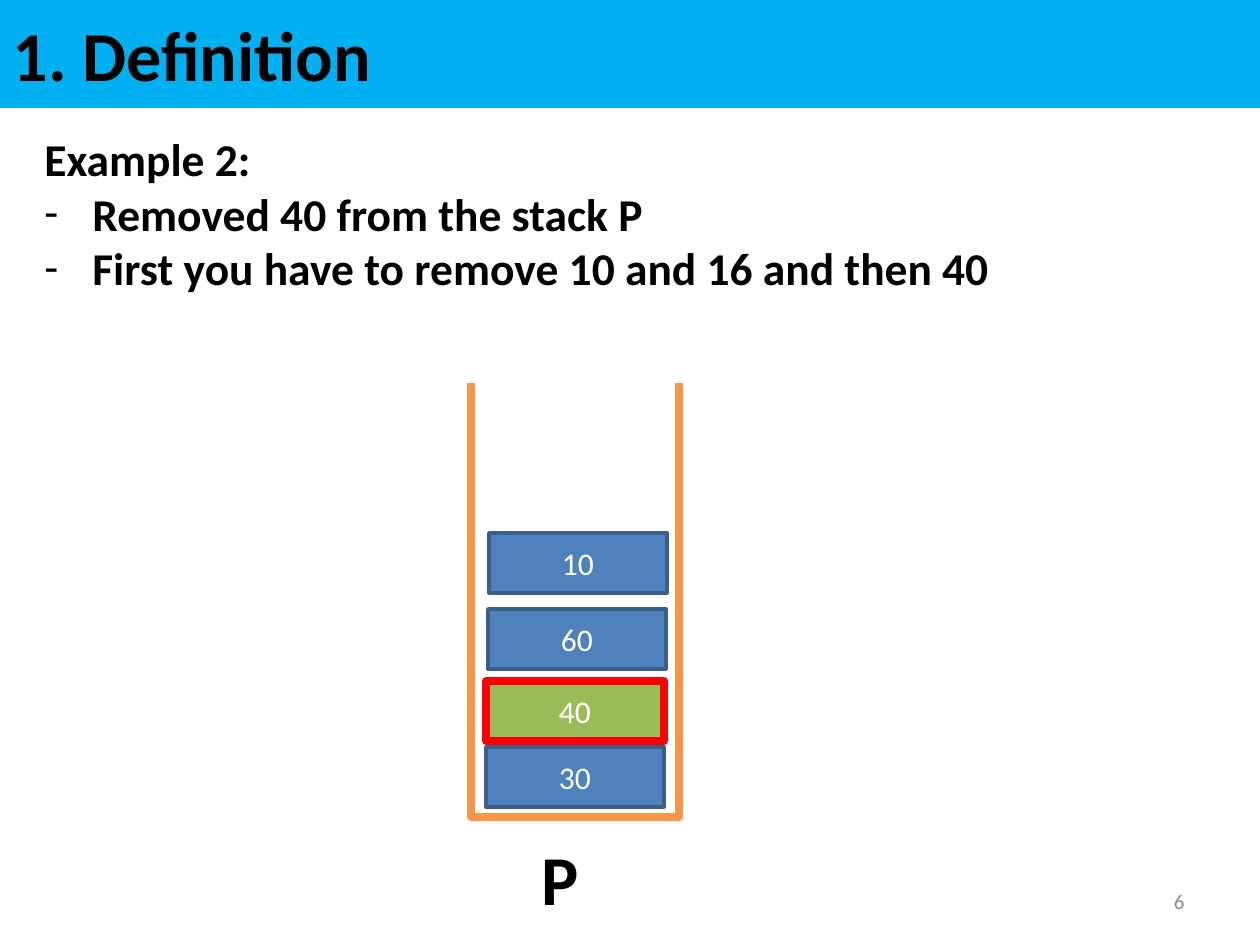
from dataclasses import dataclass
from typing import Optional

from lxml.etree import SubElement
from pptx import Presentation
from pptx.dml.color import RGBColor
from pptx.enum.shapes import MSO_SHAPE
from pptx.enum.text import MSO_ANCHOR as Anchor, PP_ALIGN as Align
from pptx.oxml.ns import qn
from pptx.util import Emu, Pt

PX_PER_INCH = 126
FONT = "Calibri"
COLORS = {
    "band": "00B0F0", "ink": "000000", "paper": "FFFFFF", "number": "8C8C8C",
    "stack": "F79646", "item": "4F81BD", "item_edge": "3A5F8C",
    "target": "9BBB59", "target_edge": "FF0000",
}


@dataclass(frozen=True)
class Box:
    left: int
    top: int
    width: int
    height: int


@dataclass(frozen=True)
class Item:
    value: str
    left: int
    top: int
    fill: str = "item"
    edge: str = "item_edge"
    edge_pt: float = 2


def px(length: int) -> Emu:
    return Emu(round(length * 914400 / PX_PER_INCH))


def place(box: Box) -> tuple:
    return px(box.left), px(box.top), px(box.width), px(box.height)


def color(name: str) -> RGBColor:
    return RGBColor.from_string(COLORS[name])


def write(paragraph, text: str, size: int, ink: str, bold: bool = False,
          align: Align = Align.LEFT) -> None:
    paragraph.alignment = align
    run = paragraph.add_run()
    run.text = text
    run.font.name = FONT
    run.font.size = Pt(size)
    run.font.bold = bold
    run.font.color.rgb = color(ink)


def add_dash(paragraph, indent: int) -> None:
    props = paragraph._p.get_or_add_pPr()
    props.set("marL", str(px(indent)))
    props.set("indent", str(-px(indent)))
    SubElement(props, qn("a:buFont"), typeface=FONT)
    SubElement(props, qn("a:buChar"), char="-")


def add_rect(slide, box: Box, fill: str, edge: Optional[str] = None,
             edge_pt: float = 0):
    rect = slide.shapes.add_shape(MSO_SHAPE.RECTANGLE, *place(box))
    rect.shadow.inherit = False
    rect.fill.solid()
    rect.fill.fore_color.rgb = color(fill)
    if edge:
        rect.line.color.rgb = color(edge)
        rect.line.width = Pt(edge_pt)
    else:
        rect.line.fill.background()
    return rect


def add_text(slide, box: Box, wrap: bool = True, anchor: Anchor = Anchor.TOP):
    frame = slide.shapes.add_textbox(*place(box)).text_frame
    frame.word_wrap = wrap
    frame.vertical_anchor = anchor
    return frame


def add_item(slide, item: Item) -> None:
    rect = add_rect(slide, Box(item.left, item.top, 178, 60),
                    item.fill, item.edge, item.edge_pt)
    frame = rect.text_frame
    frame.vertical_anchor = Anchor.MIDDLE
    write(frame.paragraphs[0], item.value, 18, "paper", align=Align.CENTER)


ITEMS = [
    Item("60", 488, 609),
    Item("30", 486, 747),
    Item("40", 486, 681, "target", "target_edge", 4.5),
    Item("10", 489, 533),
]
STEPS = [
    "Removed 40 from the stack P",
    "First you have to remove 10 and 16 and then 40",
]


def main() -> None:
    deck = Presentation()
    deck.slide_width, deck.slide_height = px(1260), px(945)
    slide = deck.slides.add_slide(deck.slide_layouts[5])

    # Title band
    title = slide.shapes.title
    title.left, title.top, title.width, title.height = place(Box(0, 0, 1260, 108))
    title.fill.solid()
    title.fill.fore_color.rgb = color("band")
    title.text_frame.vertical_anchor = Anchor.MIDDLE
    write(title.text_frame.paragraphs[0], "1. Definition", 40, "ink", bold=True)

    # Slide number
    number = add_text(slide, Box(903, 876, 294, 50), anchor=Anchor.MIDDLE)
    write(number.paragraphs[0], "6", 12, "number", align=Align.RIGHT)

    # Stack, opened at the top by a white cover
    add_rect(slide, Box(471, 373, 208, 444), "paper", "stack", 4.5)
    stack_name = add_text(slide, Box(529, 829, 63, 97), wrap=False)
    write(stack_name.paragraphs[0], "P", 40, "ink", bold=True)
    add_rect(slide, Box(422, 334, 277, 49), "paper")
    for item in ITEMS:
        add_item(slide, item)

    # Example text
    example = add_text(slide, Box(32, 125, 1121, 178))
    write(example.paragraphs[0], "Example 2:", 26, "ink", bold=True)
    for step in STEPS:
        paragraph = example.add_paragraph()
        add_dash(paragraph, 48)
        write(paragraph, step, 26, "ink", bold=True)

    deck.save("out.pptx")


if __name__ == "__main__":
    main()
